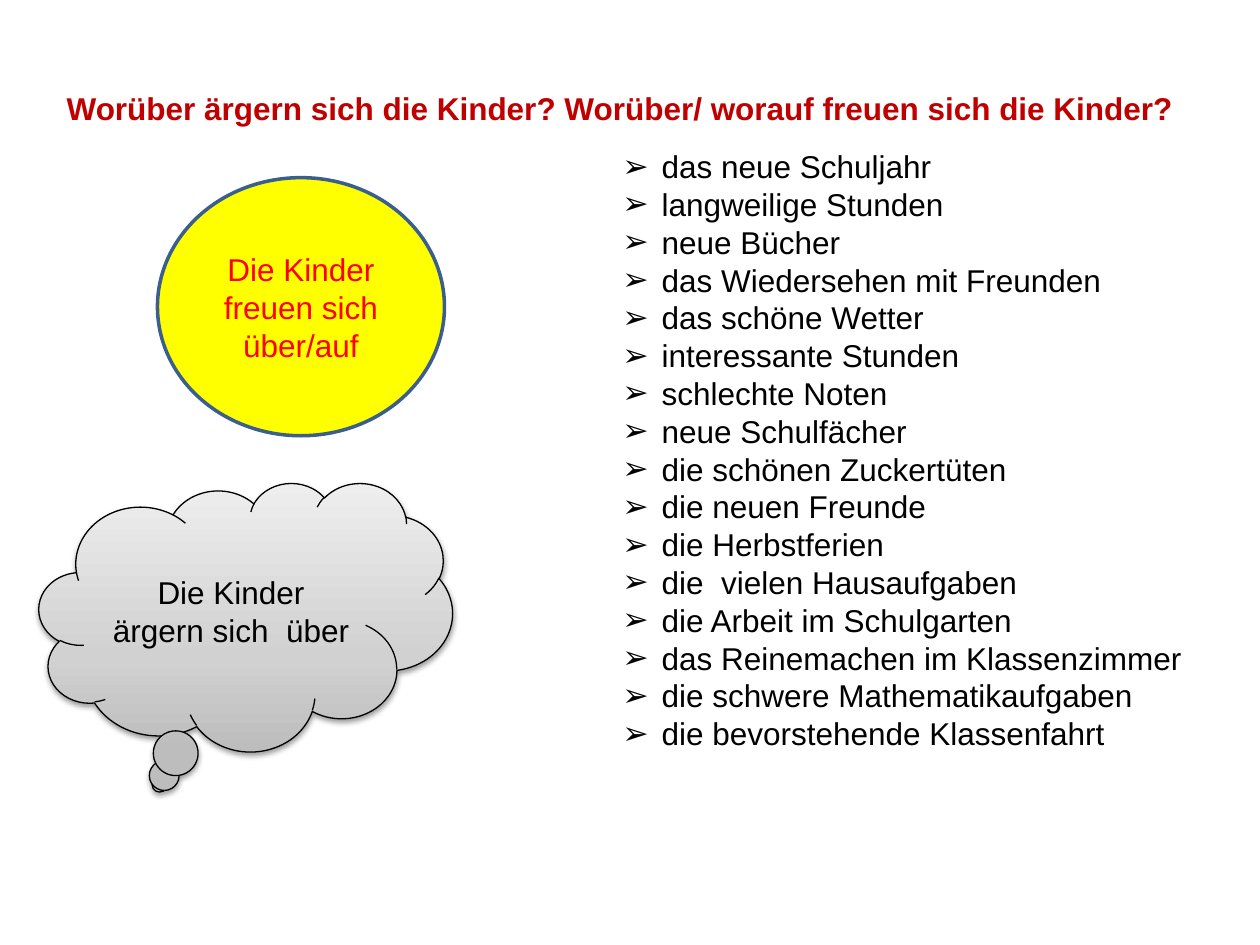
from copy import deepcopy

from lxml import etree
from pptx import Presentation
from pptx.dml.color import RGBColor
from pptx.enum.shapes import MSO_SHAPE
from pptx.enum.text import MSO_ANCHOR, MSO_AUTO_SIZE, PP_ALIGN
from pptx.oxml import parse_xml
from pptx.oxml.ns import qn
from pptx.util import Pt

OVAL, CLOUD = MSO_SHAPE.OVAL, MSO_SHAPE.CLOUD_CALLOUT
MIDDLE, BOTTOM = MSO_ANCHOR.MIDDLE, MSO_ANCHOR.BOTTOM
LEFT, CENTER = PP_ALIGN.LEFT, PP_ALIGN.CENTER
NS = "http://schemas.openxmlformats.org/drawingml/2006/main"
COLORS = {
    "title": "C00000", "text": "000000", "happy": "FF0000",
    "sun": "FFFF00", "sun_line": "3A5F8C",
    "cloud_dark": "BDBDBD", "cloud_mid": "D1D1D1", "cloud_light": "EEEEEE",
}
TOPICS = [
    "das neue Schuljahr", "langweilige Stunden", "neue Bücher",
    "das Wiedersehen mit Freunden", "das schöne Wetter",
    "interessante Stunden", "schlechte Noten", "neue Schulfächer",
    "die schönen Zuckertüten", "die neuen Freunde", "die Herbstferien",
    "die  vielen Hausaufgaben", "die Arbeit im Schulgarten",
    "das Reinemachen im Klassenzimmer", "die schwere Mathematikaufgaben",
    "die bevorstehende Klassenfahrt",
]


def rgb(name):
    return RGBColor.from_string(COLORS[name])


def style(p, color, align, bold=False):
    p.alignment = align
    for r in p.runs:
        r.font.name = "Arial"
        r.font.size = Pt(18)
        r.font.bold = bold
        r.font.color.rgb = rgb(color)


prs = Presentation()
prs.slide_width, prs.slide_height = Pt(720), Pt(540)
s = prs.slides.add_slide(prs.slide_layouts[5])

title = s.shapes.title
title.left, title.top, title.width, title.height = Pt(16.5), Pt(16.5), Pt(703.5), Pt(56)
tf = title.text_frame
tf.text = "Worüber ärgern sich die Kinder? Worüber/ worauf freuen sich die Kinder?"
tf.auto_size = MSO_AUTO_SIZE.NONE
tf.vertical_anchor = BOTTOM
tf.margin_bottom = 0
p = tf.paragraphs[0]
p._p.get_or_add_pPr().set("marL", str(Pt(14.4)))
style(p, "title", LEFT, True)

bubbles = []
for kind, box, text, color, line, width in [
    (OVAL, (90, 101.5, 164, 147.5), "Die Kinder freuen sich über/auf", "happy", "sun_line", 2),
    (CLOUD, (22.3, 275.8, 236.2, 153.4), "Die Kinder ärgern sich  über", "text", "text", 0.75),
]:
    sp = s.shapes.add_shape(kind, *[Pt(v) for v in box])
    sp.shadow.inherit = False
    sp.line.color.rgb = rgb(line)
    sp.line.width = Pt(width)
    tf = sp.text_frame
    tf.text = text
    tf.word_wrap = True
    tf.vertical_anchor = MIDDLE
    style(tf.paragraphs[0], color, CENTER)
    bubbles.append(sp)

sun, cloud = bubbles
sun.fill.solid()
sun.fill.fore_color.rgb = rgb("sun")

cloud.fill.gradient()
cloud.fill.gradient_angle = 90
stops = cloud._element.spPr.find(".//" + qn("a:gsLst"))
stops.insert(1, deepcopy(stops[0]))
for stop, (position, color) in zip(
    cloud.fill.gradient_stops, [(0, "cloud_dark"), (0.35, "cloud_mid"), (1, "cloud_light")]
):
    stop.position = position
    stop.color.rgb = rgb(color)
cloud._element.spPr.find(qn("a:effectLst")).append(parse_xml(
    f'<a:outerShdw xmlns:a="{NS}" blurRad="{Pt(3.1)}" dist="{Pt(1.6)}" dir="5400000" rotWithShape="0">'
    f'<a:srgbClr val="{COLORS["text"]}"><a:alpha val="38000"/></a:srgbClr></a:outerShdw>'
))

topics = s.shapes.add_textbox(Pt(348.5), Pt(80.6), Pt(368.6), Pt(356.4))
tf = topics.text_frame
tf.text = "\n".join(TOPICS)
tf.word_wrap = True
tf.auto_size = MSO_AUTO_SIZE.SHAPE_TO_FIT_TEXT
for p in tf.paragraphs:
    pPr = p._p.get_or_add_pPr()
    pPr.set("marL", str(Pt(22.5)))
    pPr.set("indent", str(Pt(-22.5)))
    etree.SubElement(pPr, qn("a:buFont"), typeface="Arial")
    etree.SubElement(pPr, qn("a:buChar"), char="➢")
    style(p, "text", LEFT)

prs.save("out.pptx")
